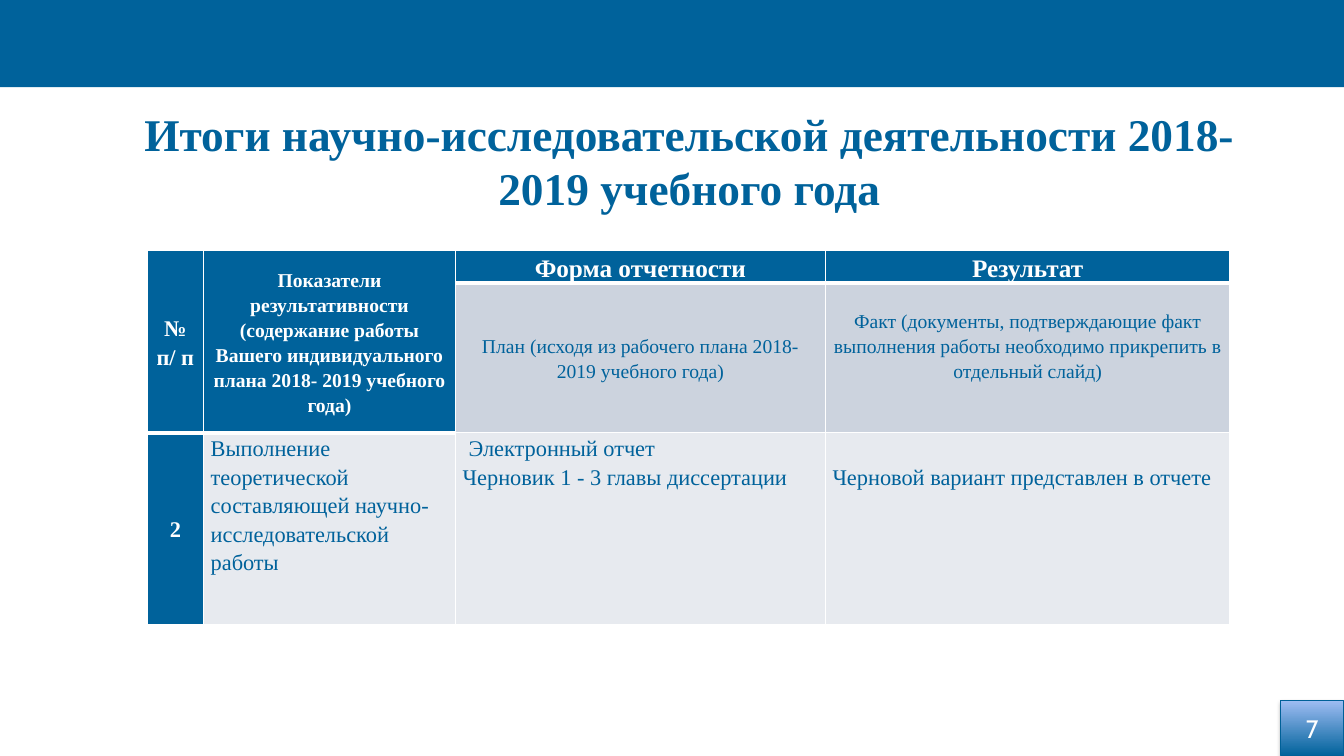
from dataclasses import dataclass
from typing import Any

import pptx
import pptx.dml.color
import pptx.enum.shapes
import pptx.enum.text
import pptx.oxml
import pptx.oxml.ns
import pptx.util

Cm = pptx.util.Cm
Pt = pptx.util.Pt
ALIGN = pptx.enum.text.PP_ALIGN
ANCHOR = pptx.enum.text.MSO_ANCHOR
NS = pptx.oxml.ns.nsdecls("a")

BLUE = "00629B"
WHITE = "FFFFFF"
GREY = "CCD3DE"
LIGHT = "E7EAEF"
SERIF = "Times New Roman"


@dataclass
class Cell:
    row: int
    col: int
    lines: list[str]
    size: int
    fill: str
    rows: int = 1
    centred: bool = True
    middle: bool = True
    top: float = 0
    bottom: float = 0
    first_indent: float = 0


CELLS = [
    Cell(0, 0, ["№ п/ п"], 16, BLUE, rows=2),
    Cell(0, 1, ["Показатели результативности",
                "(содержание работы Вашего индивидуального плана 2018- 2019 учебного года)"],
         14, BLUE, rows=2),
    Cell(0, 2, ["Форма отчетности"], 18, BLUE, middle=False),
    Cell(0, 3, ["Результат"], 18, BLUE, middle=False),
    Cell(1, 2, ["План (исходя из рабочего плана 2018- 2019 учебного года)"], 14, GREY),
    Cell(1, 3, ["Факт (документы, подтверждающие факт выполнения работы "
                "необходимо прикрепить в отдельный слайд)"], 14, GREY, bottom=0.63),
    Cell(2, 0, ["2"], 16, BLUE),
    Cell(2, 1, ["Выполнение теоретической составляющей научно-исследовательской работы"],
         16, LIGHT, centred=False, middle=False),
    Cell(2, 2, ["Электронный отчет", "Черновик 1 - 3 главы диссертации"],
         16, LIGHT, centred=False, middle=False, first_indent=0.15),
    Cell(2, 3, ["Черновой вариант представлен в отчете"],
         16, LIGHT, centred=False, middle=False, top=0.73),
]
COL_WIDTHS = [1.42, 6.35, 9.32, 10.2]
ROW_HEIGHTS = [0.82, 3.73, 4.83]


def rgb(value: str) -> pptx.dml.color.RGBColor:
    return pptx.dml.color.RGBColor.from_string(value)


def style(p: Any, size: float, color: str, name: str = SERIF,
          bold: bool = False, align: Any = ALIGN.CENTER) -> None:
    p.alignment = align
    p.font.size = Pt(size)
    p.font.name = name
    p.font.bold = bold
    p.font.color.rgb = rgb(color)


def add_borders(cell: Any, thick: str) -> None:
    tc_pr = cell._tc.get_or_add_tcPr()
    for i, side in enumerate("LRTB"):
        width = Pt(3 if side == thick else 1)
        tc_pr.insert(i, pptx.oxml.parse_xml(
            f'<a:ln{side} {NS} w="{width}"><a:solidFill>'
            f'<a:srgbClr val="{WHITE}"/></a:solidFill></a:ln{side}>'))


def thick_side(row: int, col: int) -> str:
    header_end = 1 if col < 2 else 0
    return {header_end: "B", header_end + 1: "T"}.get(row, "")


def fill_cell(table: Any, c: Cell) -> None:
    cell = table.cell(c.row, c.col)
    if c.rows > 1:
        cell.merge(table.cell(c.row + c.rows - 1, c.col))
    cell.margin_left = cell.margin_right = Cm(0.18)
    cell.margin_top, cell.margin_bottom = Cm(c.top), Cm(c.bottom)
    cell.vertical_anchor = ANCHOR.MIDDLE if c.middle else ANCHOR.TOP
    for row in range(c.row, c.row + c.rows):
        part = table.cell(row, c.col)
        part.fill.solid()
        part.fill.fore_color.rgb = rgb(c.fill)
        add_borders(part, "B" if c.rows > 1 else thick_side(row, c.col))
    tf = cell.text_frame
    tf.text = "\n".join(c.lines)
    dark = c.fill == BLUE
    for p in tf.paragraphs:
        p.line_spacing = 1.15
        style(p, c.size, WHITE if dark else BLUE, bold=dark,
              align=ALIGN.CENTER if c.centred else ALIGN.LEFT)
    if c.first_indent:
        tf.paragraphs[0]._p.get_or_add_pPr().set("indent", str(Cm(c.first_indent)))


def add_rect(slide: Any, left: float, top: float, width: float, height: float) -> Any:
    sp = slide.shapes.add_shape(pptx.enum.shapes.MSO_SHAPE.RECTANGLE,
                                Cm(left), Cm(top), Cm(width), Cm(height))
    sp.shadow.inherit = False
    return sp


def add_band(slide: Any) -> None:
    band = add_rect(slide, 0, 0, 33.87, 2.2)
    band.fill.solid()
    band.fill.fore_color.rgb = rgb(BLUE)
    band.line.fill.background()


def add_title(slide: Any) -> None:
    title = slide.shapes.title
    title.left, title.top, title.width, title.height = Cm(2.13), Cm(2.54), Cm(30.48), Cm(2.29)
    tf = title.text_frame
    tf.text = "Итоги научно-исследовательской деятельности 2018- 2019 учебного года"
    tf.word_wrap = True
    tf.auto_size = pptx.enum.text.MSO_AUTO_SIZE.NONE
    tf.vertical_anchor = ANCHOR.TOP
    style(tf.paragraphs[0], 32.4, BLUE, bold=True)


def add_results(slide: Any) -> None:
    frame = slide.shapes.add_table(len(ROW_HEIGHTS), len(COL_WIDTHS), Cm(3.71), Cm(6.32),
                                   Cm(sum(COL_WIDTHS)), Cm(sum(ROW_HEIGHTS)))
    table = frame.table
    for column, width in zip(table.columns, COL_WIDTHS):
        column.width = Cm(width)
    for row, height in zip(table.rows, ROW_HEIGHTS):
        row.height = Cm(height)
    for c in CELLS:
        fill_cell(table, c)


def add_page_number(slide: Any) -> None:
    sp = add_rect(slide, 32.28, 17.65, 1.58, 1.4)
    sp.fill.gradient()
    sp.fill.gradient_angle = 90
    for stop, color in zip(sp.fill.gradient_stops, (BLUE, "9FBDF3")):
        stop.color.rgb = rgb(color)
    sp.line.color.rgb = rgb("006098")
    sp.line.width = Pt(0.75)
    effects = sp._element.spPr.find(pptx.oxml.ns.qn("a:effectLst"))
    effects.append(pptx.oxml.parse_xml(
        f'<a:outerShdw {NS} blurRad="{Pt(3.1)}" dist="{Pt(1.8)}" dir="5400000" rotWithShape="0">'
        '<a:srgbClr val="000000"><a:alpha val="35000"/></a:srgbClr></a:outerShdw>'))
    tf = sp.text_frame
    tf.text = "7"
    tf.vertical_anchor = ANCHOR.MIDDLE
    style(tf.paragraphs[0], 18, WHITE, name="Cabin")


def main() -> None:
    prs = pptx.Presentation()
    prs.slide_width, prs.slide_height = Cm(33.87), Cm(19.05)
    slide = prs.slides.add_slide(prs.slide_layouts[5])
    add_band(slide)
    add_title(slide)
    add_results(slide)
    add_page_number(slide)
    prs.save("out.pptx")


if __name__ == "__main__":
    main()
